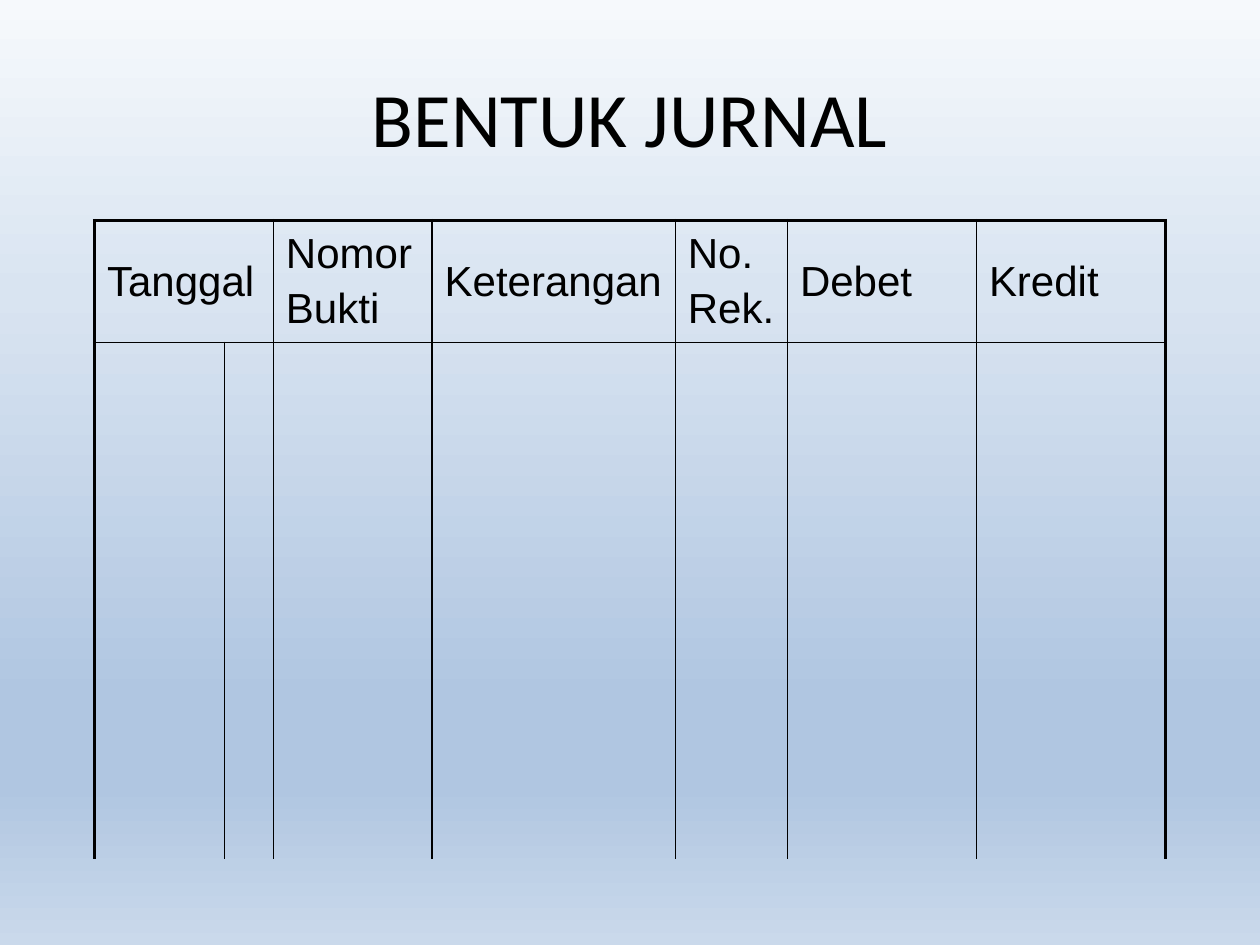
from dataclasses import dataclass
from typing import Any

from lxml.etree import SubElement
from pptx import Presentation
from pptx.dml.color import RGBColor
from pptx.enum.text import MSO_ANCHOR, PP_ALIGN
from pptx.oxml.ns import qn
from pptx.util import Inches, Pt

INK = "000000"
NO_STYLE = "{2D5ABB26-0587-4C30-8999-92F81FD0307C}"
SKY = [(0, "F6F9FC"), (31, "D9E4F1"), (74, "B0C6E1"), (83, "B0C6E1"), (100, "CAD9EB")]
THICK, THIN = 2.25, 1
ROW_COUNT, ROW_HEIGHT = 6, 0.82
TITLE_FONT = {"name": "Calibri", "size": Pt(44)}
HEADING_FONT = {"name": "Arial", "size": Pt(24)}
TITLE_FRAME = {"word_wrap": True, "vertical_anchor": MSO_ANCHOR.MIDDLE}
PLAIN_TABLE = {"first_row": False, "horz_banding": False}


@dataclass
class Column:
    """A journal column: its width, heading lines and heading span."""

    width: float
    heading: str = ""
    span: int = 1


COLUMNS = [
    Column(1.03, "Tanggal", 2),
    Column(0.39),
    Column(1.26, "Nomor\nBukti"),
    Column(1.93, "Keterangan"),
    Column(0.89, "No.\nRek."),
    Column(1.5, "Debet"),
    Column(1.5, "Kredit"),
]


def color(code: str) -> RGBColor:
    """Turn a hex string into a colour."""
    return RGBColor.from_string(code)


def apply(target: Any, values: dict[str, Any]) -> None:
    """Set each format value on the target."""
    for key, value in values.items():
        setattr(target, key, value)


def write(frame: Any, text: str, font: dict[str, Any], paragraph_format: dict[str, Any]) -> None:
    """Write text with one paragraph per line."""
    frame.text = text
    for paragraph in frame.paragraphs:
        apply(paragraph, paragraph_format)
        for run in paragraph.runs:
            apply(run.font, font)
            run.font.color.rgb = color(INK)


def paint_background(slide: Any) -> None:
    """Fill the slide with the vertical sky gradient."""
    fill = slide.background.fill
    fill.gradient()
    fill.gradient_angle = 270
    stops = next(slide.element.iter(qn("a:gsLst")))
    stops.clear()
    for position, code in SKY:
        stop = SubElement(stops, qn("a:gs"), pos=str(position * 1000))
        SubElement(stop, qn("a:srgbClr"), val=code)


def draw_borders(cell: Any, borders: dict[str, float]) -> None:
    """Draw the cell borders, given in points by side."""
    properties = cell._tc.get_or_add_tcPr()
    for side, points in borders.items():
        line = SubElement(properties, qn(f"a:ln{side}"), w=str(Pt(points)))
        if points:
            solid = SubElement(line, qn("a:solidFill"))
            SubElement(solid, qn("a:srgbClr"), val=INK)
        else:
            SubElement(line, qn("a:noFill"))


def add_title(slide: Any, text: str) -> None:
    """Add the centred slide title."""
    title = slide.shapes.add_textbox(Inches(0.5), Inches(0.3), Inches(9), Inches(1.25))
    apply(title.text_frame, TITLE_FRAME)
    write(title.text_frame, text, TITLE_FONT, {"alignment": PP_ALIGN.CENTER})


def add_journal(slide: Any) -> None:
    """Add the journal table with headings and an open body."""
    frame = slide.shapes.add_table(
        ROW_COUNT, len(COLUMNS), Inches(0.75), Inches(1.75), Inches(8.5), Inches(ROW_COUNT * ROW_HEIGHT)
    )
    journal = frame.table
    apply(journal, PLAIN_TABLE)
    next(frame._element.iter(qn("a:tableStyleId"))).text = NO_STYLE
    for row in journal.rows:
        row.height = Inches(ROW_HEIGHT)
    for index, column in enumerate(COLUMNS):
        journal.columns[index].width = Inches(column.width)
        if column.span > 1:
            journal.cell(0, index).merge(journal.cell(0, index + column.span - 1))

    for row in range(ROW_COUNT):
        for index, column in enumerate(COLUMNS):
            cell = journal.cell(row, index)
            if cell.is_spanned:
                continue
            last = index + (column.span if row == 0 else 1) == len(COLUMNS)
            draw_borders(cell, {
                "L": THICK if index == 0 else THIN,
                "R": THICK if last else THIN,
                "T": {0: THICK, 1: THIN}.get(row, 0),
                "B": THIN if row == 0 else 0,
            })
            cell.fill.background()
            if row == 0:
                cell.vertical_anchor = MSO_ANCHOR.MIDDLE
                write(cell.text_frame, column.heading, HEADING_FONT, {"space_before": Pt(4.8)})


def main() -> None:
    """Build and save the journal slide."""
    deck = Presentation()
    apply(deck, {"slide_width": Inches(10), "slide_height": Inches(7.5)})
    slide = deck.slides.add_slide(deck.slide_layouts[6])
    paint_background(slide)
    add_title(slide, "BENTUK JURNAL")
    add_journal(slide)
    deck.save("out.pptx")


if __name__ == "__main__":
    main()
